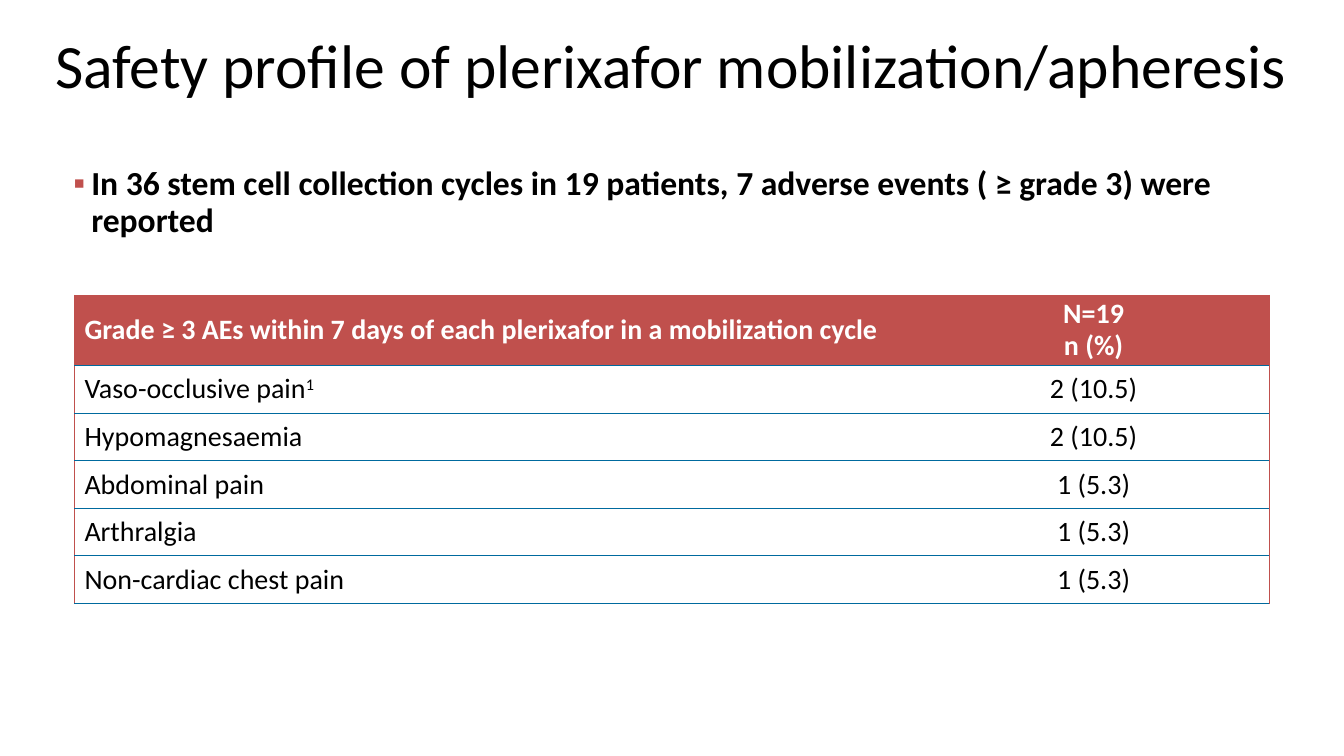
from dataclasses import dataclass

from lxml import etree
from pptx import Presentation
from pptx.dml.color import RGBColor
from pptx.enum.text import MSO_ANCHOR, MSO_AUTO_SIZE, PP_ALIGN
from pptx.oxml.ns import qn
from pptx.util import Cm, Pt

LEFT, CENTER = PP_ALIGN.LEFT, PP_ALIGN.CENTER
MIDDLE, TOP = MSO_ANCHOR.MIDDLE, MSO_ANCHOR.TOP
FIXED = MSO_AUTO_SIZE.NONE
PLAIN = "{2D5ABB26-0587-4C30-8999-92F81FD0307C}"


@dataclass(frozen=True)
class Theme:
    font: str = "Calibri"
    ink: str = "000000"
    paper: str = "FFFFFF"
    red: str = "C0504D"
    blue: str = "006A9E"
    title: int = 44
    body: int = 24
    cell: int = 20
    edge: float = 0.75
    lead: float = 0.93


class Deck:
    def __init__(self, theme):
        self.theme = theme
        self.file = Presentation()
        self.file.slide_width = Cm(33.87)
        self.file.slide_height = Cm(19.05)
        self.slide = self.file.slides.add_slide(self.file.slide_layouts[1])

    def place(self, shape, left, top, width, height):
        shape.left, shape.top = Cm(left), Cm(top)
        shape.width, shape.height = Cm(width), Cm(height)

    def style(self, para, size, color, bold=False, align=LEFT):
        para.alignment = align
        para.space_before = Pt(0)
        for run in para.runs:
            font = run.font
            font.name, font.size, font.bold = self.theme.font, Pt(size), bold
            font.color.rgb = RGBColor.from_string(color)

    def title(self, text, *box):
        shape = self.slide.shapes.title
        self.place(shape, *box)
        frame = shape.text_frame
        frame.text = text
        frame.auto_size, frame.vertical_anchor = FIXED, MIDDLE
        self.style(frame.paragraphs[0], self.theme.title, self.theme.ink, align=CENTER)

    def bullet(self, text, *box):
        shape = self.slide.placeholders[1]
        self.place(shape, *box)
        frame = shape.text_frame
        frame.text = text
        frame.auto_size, frame.vertical_anchor = FIXED, TOP
        frame.margin_left = frame.margin_right = 0
        para = frame.paragraphs[0]
        props = para._p.get_or_add_pPr()
        props.set("marL", str(Cm(0.45)))
        props.set("indent", str(-Cm(0.45)))
        tint = etree.SubElement(props, qn("a:buClr"))
        etree.SubElement(tint, qn("a:srgbClr"), val=self.theme.red)
        etree.SubElement(props, qn("a:buFont"), typeface="Arial")
        etree.SubElement(props, qn("a:buChar"), char="▪")
        para.line_spacing = self.theme.lead
        self.style(para, self.theme.body, self.theme.ink, bold=True)

    def border(self, cell, **sides):
        props = cell._tc.get_or_add_tcPr()
        for side in "LRTB":
            if side in sides:
                line = etree.SubElement(props, qn(f"a:ln{side}"), w=str(Pt(self.theme.edge)))
                fill = etree.SubElement(line, qn("a:solidFill"))
                etree.SubElement(fill, qn("a:srgbClr"), val=sides[side])

    def cell(self, cell, text, col, head):
        theme = self.theme
        edge = {"R" if col else "L": theme.red}
        self.border(cell, T=theme.red if head else theme.blue, B=theme.blue, **edge)
        if head:
            cell.fill.solid()
            cell.fill.fore_color.rgb = RGBColor.from_string(theme.red)
        else:
            cell.fill.background()
        cell.vertical_anchor = MIDDLE
        cell.margin_left = cell.margin_right = Cm(0 if col else 0.25)
        cell.margin_top = cell.margin_bottom = Cm(0.08 if head else 0.13)
        cell.text_frame.text = text
        for para in cell.text_frame.paragraphs:
            para.line_spacing = theme.lead
            self.style(para, theme.cell, theme.paper if head else theme.ink,
                       bold=head, align=CENTER if col else LEFT)

    def table(self, rows, left, top, widths, heights):
        frame = self.slide.shapes.add_table(
            len(heights), len(widths), Cm(left), Cm(top),
            Cm(sum(widths)), Cm(sum(heights)))
        table = frame.table
        table.first_row = table.horz_banding = False
        table._tbl.tblPr.find(qn("a:tableStyleId")).text = PLAIN
        for col, width in zip(table.columns, widths):
            col.width = Cm(width)
        for row, height in zip(table.rows, heights):
            row.height = Cm(height)
        for r, texts in enumerate(rows):
            for c, text in enumerate(texts):
                self.cell(table.cell(r, c), text, c, r == 0)
        return table

    def footer(self, table):
        last = len(table.rows) - 1
        cell = table.cell(last, 0)
        cell.merge(table.cell(last, 1))
        self.border(cell, T=self.theme.blue)
        cell.fill.background()
        cell.margin_top = cell.margin_bottom = 0

    def note(self, cell, mark):
        para = cell.text_frame.paragraphs[0]
        para.add_run().text = mark
        self.style(para, self.theme.cell, self.theme.ink)
        para.runs[-1].font._element.set("baseline", "30000")


def main():
    deck = Deck(Theme())
    deck.title("Safety profile of plerixafor mobilization/apheresis", 0.61, 0.43, 32.61, 2.34)
    deck.bullet("In 36 stem cell collection cycles in 19 patients, "
                "7 adverse events ( ≥ grade 3) were reported", 1.85, 4.04, 31.39, 2.16)
    rows = [
        ("Grade ≥ 3 AEs within 7 days of each plerixafor in a mobilization cycle",
         "N=19\nn (%)"),
        ("Vaso-occlusive pain", "2 (10.5)"),
        ("Hypomagnesaemia", "2 (10.5)"),
        ("Abdominal pain", "1 (5.3)"),
        ("Arthralgia", "1 (5.3)"),
        ("Non-cardiac chest pain", "1 (5.3)"),
    ]
    table = deck.table(rows, 1.88, 7.44, [21.26, 8.84], [1.75] + [1.2] * 5 + [0.64])
    deck.note(table.cell(1, 0), "1")
    deck.footer(table)
    deck.file.save("out.pptx")


if __name__ == "__main__":
    main()
